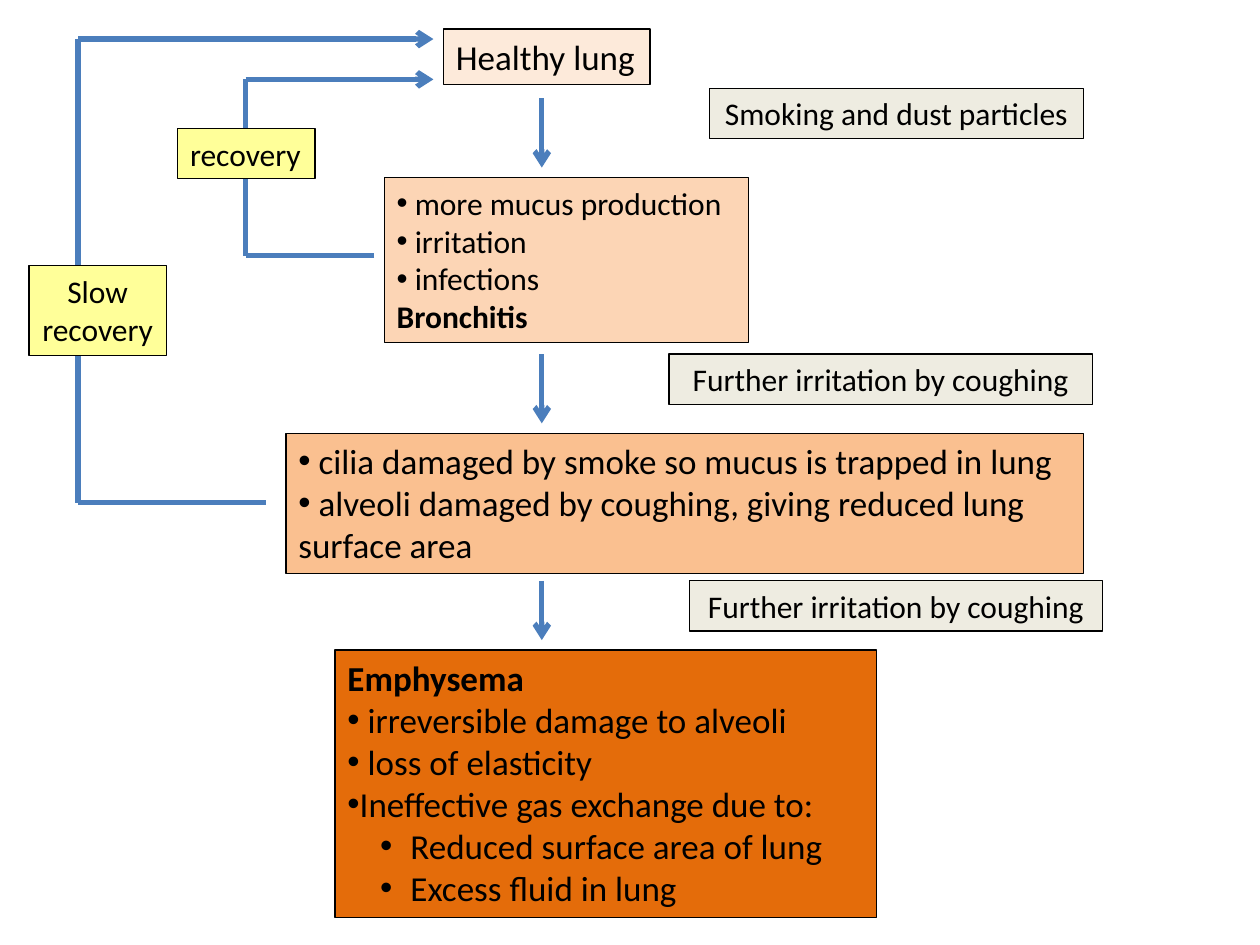
from dataclasses import dataclass

from lxml import etree
from pptx import Presentation
from pptx.dml.color import RGBColor
from pptx.enum.shapes import MSO_CONNECTOR
from pptx.enum.text import MSO_AUTO_SIZE, PP_ALIGN
from pptx.oxml.ns import qn
from pptx.util import Inches, Pt

STRAIGHT = MSO_CONNECTOR.STRAIGHT
LEFT, CENTER = PP_ALIGN.LEFT, PP_ALIGN.CENTER
GROW = MSO_AUTO_SIZE.SHAPE_TO_FIT_TEXT

FONT = "Calibri"
INK = "000000"
ARROW_BLUE = "4B7EBC"
CAUSE_FILL = "EEECE1"
RECOVERY_FILL = "FFFF99"
FLOW_X = 4.3
HEALTHY_X = 3.44


@dataclass
class Line:
    text: str
    bullet: bool = False
    bold: bool = False
    level: int = 0


@dataclass
class Box:
    left: float
    top: float
    width: float
    height: float
    fill: str
    size: int
    lines: list[Line]
    align: PP_ALIGN = LEFT


@dataclass
class Route:
    points: list[tuple[float, float]]


STAGES = [
    Box(3.52, 0.23, 1.64, 0.44, "FDEADA", 20, [Line("Healthy lung")]),
    Box(3.05, 1.41, 2.89, 1.31, "FCD5B5", 18, [
        Line(" more mucus production", bullet=True),
        Line(" irritation", bullet=True),
        Line(" infections", bullet=True),
        Line("Bronchitis", bold=True),
    ]),
    Box(2.27, 3.44, 6.33, 1.11, "FAC090", 20, [
        Line(" cilia damaged by smoke so mucus is trapped in lung", bullet=True),
        Line(" alveoli damaged by coughing, giving reduced lung surface area", bullet=True),
    ]),
    Box(2.66, 5.16, 4.3, 2.12, "E46C0A", 20, [
        Line("Emphysema", bold=True),
        Line(" irreversible damage to alveoli", bullet=True),
        Line(" loss of elasticity", bullet=True),
        Line("Ineffective gas exchange due to:", bullet=True),
        Line("Reduced surface area of lung", bullet=True, level=1),
        Line("Excess fluid in lung", bullet=True, level=1),
    ]),
]

CAUSES = [
    Box(5.63, 0.7, 2.97, 0.4, CAUSE_FILL, 18, [Line("Smoking and dust particles")], CENTER),
    Box(5.31, 2.81, 3.36, 0.4, CAUSE_FILL, 18, [Line("Further irritation by coughing")], CENTER),
    Box(5.47, 4.61, 3.28, 0.4, CAUSE_FILL, 18, [Line("Further irritation by coughing")], CENTER),
]

RECOVERIES = [
    Box(0.23, 2.11, 1.09, 0.71, RECOVERY_FILL, 18, [Line("Slow"), Line("recovery")], CENTER),
    Box(1.41, 1.02, 1.09, 0.4, RECOVERY_FILL, 18, [Line("recovery")]),
]

PROGRESSION = [
    Route([(FLOW_X, top), (FLOW_X, bottom)])
    for top, bottom in [(0.78, 1.33), (2.81, 3.36), (4.61, 5.08)]
]
SLOW_RETURN = Route([(2.11, 3.99), (0.62, 3.99), (0.62, 0.31), (HEALTHY_X, 0.31)])
RETURN = Route([(2.97, 2.03), (1.95, 2.03), (1.95, 0.63), (HEALTHY_X, 0.63)])


def color(value: str) -> RGBColor:
    return RGBColor.from_string(value)


def set_bullet(paragraph, level: int) -> None:
    properties = paragraph._p.get_or_add_pPr()
    if level:
        properties.set("marL", str(Inches(0.5)))
        properties.set("indent", str(Inches(-0.24)))
    etree.SubElement(properties, qn("a:buFont"), typeface="Arial")
    etree.SubElement(properties, qn("a:buChar"), char="•")


def draw_box(shapes, box: Box) -> None:
    label = shapes.add_textbox(
        Inches(box.left), Inches(box.top), Inches(box.width), Inches(box.height)
    )
    label.fill.solid()
    label.fill.fore_color.rgb = color(box.fill)
    label.line.color.rgb = color(INK)
    label.line.width = Pt(0.75)
    frame = label.text_frame
    frame.word_wrap = True
    frame.auto_size = GROW
    frame.text = "\n".join(line.text for line in box.lines)
    for paragraph, line in zip(frame.paragraphs, box.lines):
        paragraph.alignment = box.align
        paragraph.level = line.level
        if line.bullet:
            set_bullet(paragraph, line.level)
        font = paragraph.runs[0].font
        font.name = FONT
        font.size = Pt(box.size)
        font.bold = line.bold
        font.color.rgb = color(INK)


def draw_route(shapes, route: Route) -> None:
    for (x1, y1), (x2, y2) in zip(route.points, route.points[1:]):
        segment = shapes.add_connector(
            STRAIGHT, Inches(x1), Inches(y1), Inches(x2), Inches(y2)
        )
        segment.line.color.rgb = color(ARROW_BLUE)
        segment.line.width = Pt(3)
        etree.SubElement(segment._element.spPr, qn("a:effectLst"))
    etree.SubElement(segment.line._get_or_add_ln(), qn("a:tailEnd"), type="arrow")


def main() -> None:
    deck = Presentation()
    deck.slide_width, deck.slide_height = Inches(10), Inches(7.5)
    shapes = deck.slides.add_slide(deck.slide_layouts[6]).shapes
    for box in STAGES + CAUSES:
        draw_box(shapes, box)
    for route in PROGRESSION:
        draw_route(shapes, route)
    draw_route(shapes.add_group_shape().shapes, SLOW_RETURN)
    draw_route(shapes, RETURN)
    for box in RECOVERIES:
        draw_box(shapes, box)
    deck.save("out.pptx")


if __name__ == "__main__":
    main()
